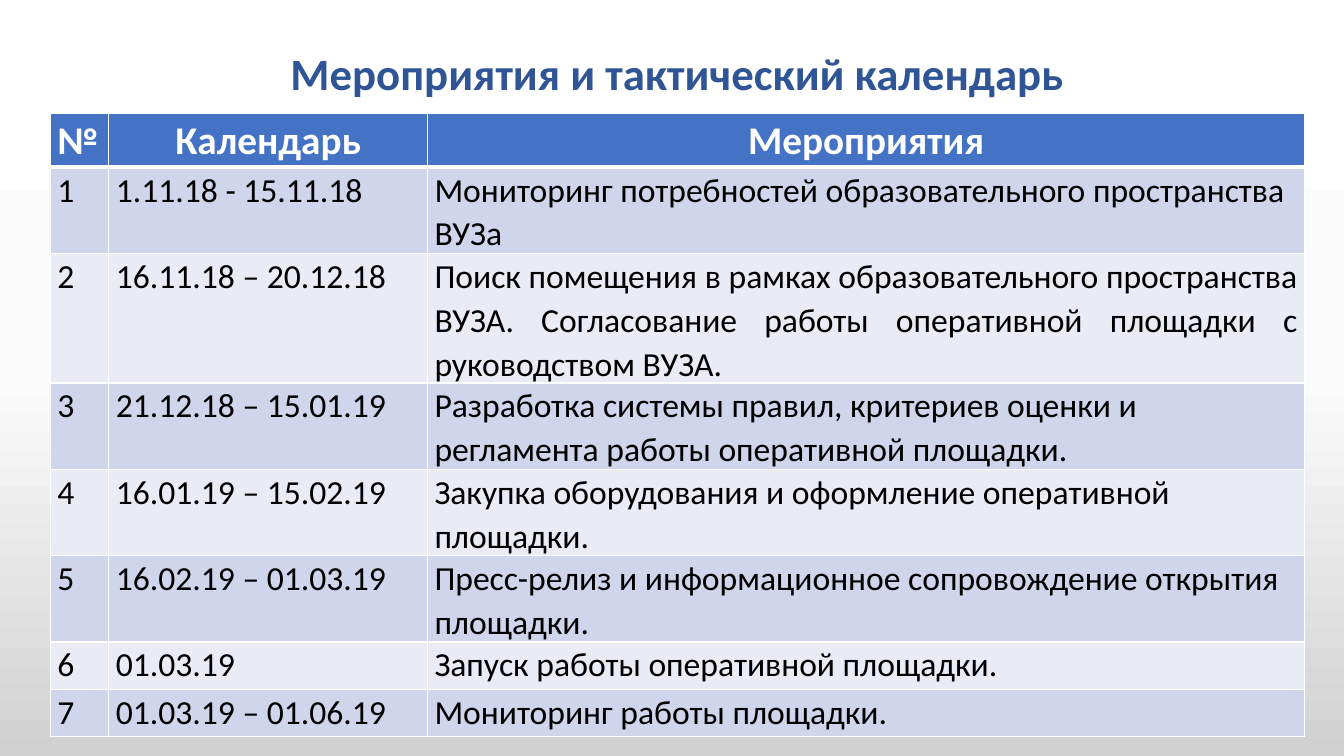
import copy

import pptx
import pptx.dml.color
import pptx.enum.text
import pptx.oxml
import pptx.oxml.ns
import pptx.util

Inches = pptx.util.Inches
Pt = pptx.util.Pt
RGBColor = pptx.dml.color.RGBColor
PP_ALIGN = pptx.enum.text.PP_ALIGN
qn = pptx.oxml.ns.qn

WHITE = RGBColor(0xFF, 0xFF, 0xFF)
BLACK = RGBColor(0x00, 0x00, 0x00)
NEAR_WHITE = RGBColor(0xFB, 0xFB, 0xFB)
GREY = RGBColor(0xD1, 0xD1, 0xD1)
TITLE_BLUE = RGBColor(0x2F, 0x55, 0x97)
HEADER_BLUE = RGBColor(0x44, 0x72, 0xC4)
DARK_BAND = RGBColor(0xCF, 0xD5, 0xEA)
LIGHT_BAND = RGBColor(0xE9, 0xEB, 0xF5)

HEADINGS = ("№", "Календарь", "Мероприятия")
EVENTS = (
    ("1.11.18 - 15.11.18", "Мониторинг потребностей образовательного пространства ВУЗа"),
    ("16.11.18 – 20.12.18", "Поиск помещения в рамках образовательного пространства ВУЗА. "
     "Согласование работы оперативной площадки с руководством ВУЗА."),
    ("21.12.18 – 15.01.19", "Разработка системы правил, критериев оценки и регламента "
     "работы оперативной площадки."),
    ("16.01.19 – 15.02.19", "Закупка оборудования и оформление оперативной площадки."),
    ("16.02.19 – 01.03.19", "Пресс-релиз и информационное сопровождение открытия площадки."),
    ("01.03.19", "Запуск работы оперативной площадки."),
    ("01.03.19 – 01.06.19", "Мониторинг работы площадки."),
)
COLUMN_WIDTHS = (0.58, 3.16, 8.7)
ROW_HEIGHTS = (0.53, 0.77, 1.17, 0.77, 0.77, 0.83, 0.47, 0.47)
JUSTIFIED_EVENT = 2


class CalendarSlide:
    font_name = "Calibri"
    line_spacing = 1.07

    def __init__(self, presentation):
        self.slide = presentation.slides.add_slide(presentation.slide_layouts[6])

    def background(self, stops):
        fill = self.slide.background.fill
        fill.gradient()
        fill.gradient_angle = 270
        stop_list = self.slide.element.find(".//" + qn("a:gsLst"))
        while len(stop_list) < len(stops):
            stop_list.append(copy.deepcopy(stop_list[0]))
        for stop, (position, color) in zip(fill.gradient_stops, stops):
            stop.position = position
            stop.color.rgb = color

    def format_text(self, paragraph, size, color, bold, alignment):
        paragraph.alignment = alignment
        for run in paragraph.runs:
            run.font.name = self.font_name
            run.font.size = Pt(size)
            run.font.bold = bold
            run.font.color.rgb = color

    def title(self, text, left, top, width, height):
        heading = self.slide.shapes.add_textbox(
            Inches(left), Inches(top), Inches(width), Inches(height))
        frame = heading.text_frame
        frame.word_wrap = False
        frame.auto_size = pptx.enum.text.MSO_AUTO_SIZE.SHAPE_TO_FIT_TEXT
        frame.text = text
        self.format_text(frame.paragraphs[0], 32, TITLE_BLUE, True, PP_ALIGN.CENTER)

    def borders(self, cell, top, bottom):
        properties = cell._tc.get_or_add_tcPr()
        for index, (side, width) in enumerate((("L", 1), ("R", 1), ("T", top), ("B", bottom))):
            properties.insert(index, pptx.oxml.parse_xml(
                f'<a:ln{side} xmlns:a="http://schemas.openxmlformats.org/drawingml/2006/main" '
                f'w="{Pt(width)}"><a:solidFill><a:srgbClr val="{WHITE}"/></a:solidFill>'
                f'</a:ln{side}>'))

    def cell(self, cell, text, fill, size, color, bold, alignment):
        cell.margin_left = cell.margin_right = Inches(0.07)
        cell.margin_top = cell.margin_bottom = 0
        cell.fill.solid()
        cell.fill.fore_color.rgb = fill
        cell.text_frame.text = text
        paragraph = cell.text_frame.paragraphs[0]
        paragraph.line_spacing = self.line_spacing
        self.format_text(paragraph, size, color, bold, alignment)

    def calendar(self, left, top, width, height):
        rows = [HEADINGS] + [(str(number), *event) for number, event in enumerate(EVENTS, 1)]
        frame = self.slide.shapes.add_table(
            len(rows), len(HEADINGS), Inches(left), Inches(top), Inches(width), Inches(height))
        table = frame.table
        for column, column_width in zip(table.columns, COLUMN_WIDTHS):
            column.width = Inches(column_width)
        for row, row_height in zip(table.rows, ROW_HEIGHTS):
            row.height = Inches(row_height)
        frame.height = Inches(height)

        for r, texts in enumerate(rows):
            for c, text in enumerate(texts):
                cell = table.cell(r, c)
                if r == 0:
                    alignment = PP_ALIGN.CENTER if c else PP_ALIGN.LEFT
                    self.cell(cell, text, HEADER_BLUE, 28, WHITE, True, alignment)
                else:
                    justified = r == JUSTIFIED_EVENT and c == 2
                    alignment = PP_ALIGN.JUSTIFY if justified else PP_ALIGN.LEFT
                    band = DARK_BAND if r % 2 else LIGHT_BAND
                    self.cell(cell, text, band, 24, BLACK, False, alignment)
                self.borders(cell, 3 if r == 1 else 1, 3 if r == 0 else 1)


def main():
    presentation = pptx.Presentation()
    presentation.slide_width = Inches(13.33)
    presentation.slide_height = Inches(7.5)
    page = CalendarSlide(presentation)
    page.background(((0, WHITE), (0.5, NEAR_WHITE), (1, GREY)))
    page.title("Мероприятия и тактический календарь", 2.74, 0.4, 7.96, 0.64)
    page.calendar(0.5, 1.13, 12.44, 6.19)
    presentation.save("out.pptx")


if __name__ == "__main__":
    main()
